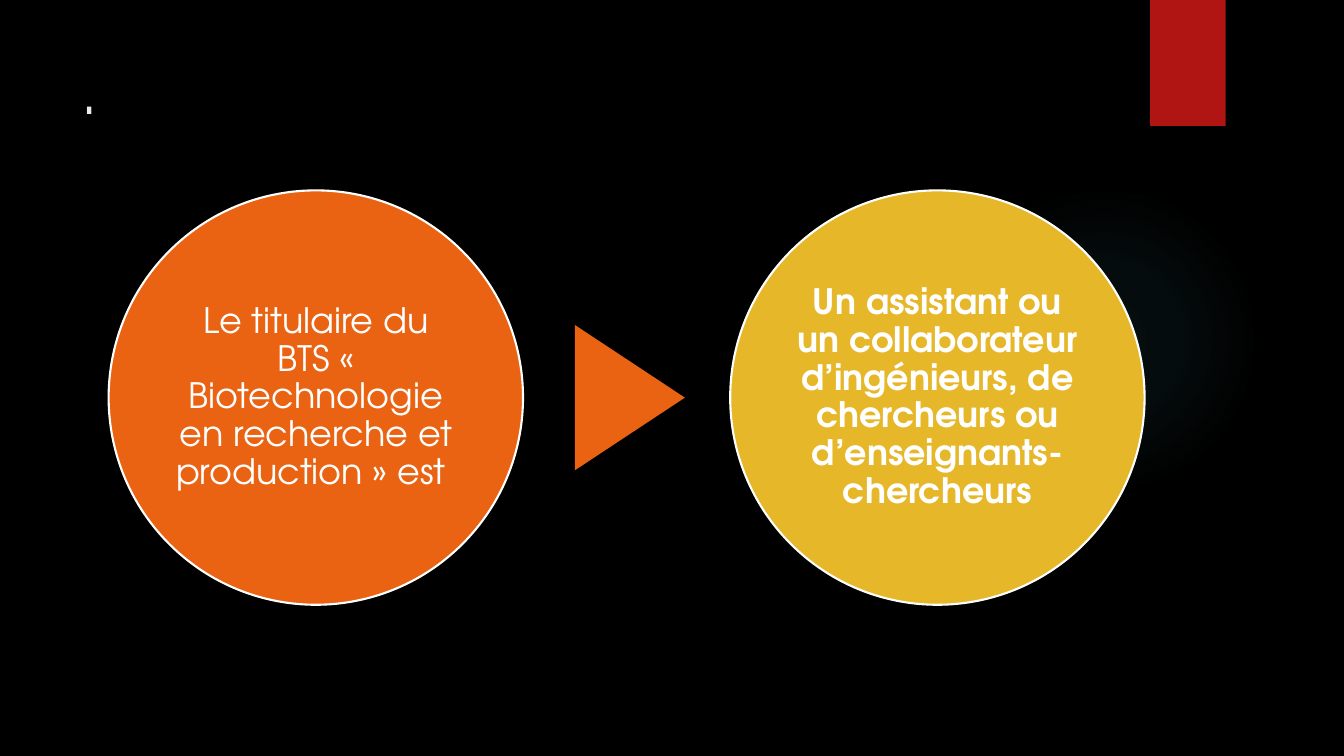
"""Build a slide on the role open to holders of the biotechnology BTS."""
import lxml.etree
import pptx
import pptx.dml.color
import pptx.enum.shapes
import pptx.enum.text
import pptx.oxml
import pptx.oxml.ns
import pptx.util

Pt = pptx.util.Pt
Shape = pptx.enum.shapes.MSO_SHAPE
Align = pptx.enum.text.PP_ALIGN
Anchor = pptx.enum.text.MSO_ANCHOR
theme = {
    "font": "TeX Gyre Adventor",
    "black": "000000",
    "white": "FFFFFF",
    "pale": "EBEBEB",
    "red": "B01513",
    "orange": "EA6312",
    "gold": "E6B729",
    "glow": "50B9C1",
    "title": 42,
    "body": 25,
}


def write(shape, text, size, color, bold=False, align=Align.LEFT,
          anchor=Anchor.TOP, inset=(7.2, 3.6), line=1.0, after=6):
    frame = shape.text_frame
    frame.word_wrap = True
    frame.auto_size = pptx.enum.text.MSO_AUTO_SIZE.NONE
    frame.vertical_anchor = anchor
    frame.margin_left = frame.margin_right = Pt(inset[0])
    frame.margin_top = frame.margin_bottom = Pt(inset[1])
    para = frame.paragraphs[0]
    para.alignment = align
    para.line_spacing = line
    para.space_before = Pt(0)
    para.space_after = Pt(after)
    run = para.add_run()
    run.text = text
    run.font.name = theme["font"]
    run.font.size = Pt(theme[size])
    run.font.bold = bold
    run.font.color.rgb = pptx.dml.color.RGBColor.from_string(theme[color])


def draw(kind, left, top, width, height, fill=None, line=None):
    shape = slide.shapes.add_shape(kind, Pt(left), Pt(top), Pt(width), Pt(height))
    shape.shadow.inherit = False
    shape.fill.background()
    shape.line.fill.background()
    if fill:
        shape.fill.solid()
        shape.fill.fore_color.rgb = pptx.dml.color.RGBColor.from_string(theme[fill])
    if line:
        shape.line.color.rgb = pptx.dml.color.RGBColor.from_string(theme[line])
        shape.line.width = Pt(1.5)
    return shape


deck = pptx.Presentation()
deck.slide_width, deck.slide_height = Pt(960), Pt(540)
slide = deck.slides.add_slide(deck.slide_layouts[5])
back = slide.background.fill
back.solid()
back.fore_color.rgb = pptx.dml.color.RGBColor.from_string(theme["black"])

glow = draw(Shape.OVAL, 677.5, 131.75, 221.75, 221.75)
stops = "".join(
    f'<a:gs pos="{spot * 1000}"><a:srgbClr val="{theme["glow"]}">'
    f'<a:alpha val="{alpha * 1000}"/></a:srgbClr></a:gs>'
    for spot, alpha in [(0, 7), (36, 6), (69, 0)])
blend = pptx.oxml.parse_xml(
    f'<a:gradFill {pptx.oxml.ns.nsdecls("a")} rotWithShape="1"><a:gsLst>{stops}</a:gsLst>'
    '<a:path path="circle"><a:fillToRect l="50000" t="50000" r="50000" b="50000"/>'
    '</a:path></a:gradFill>')
blank = glow.element.spPr.find(pptx.oxml.ns.qn("a:noFill"))
glow.element.spPr.replace(blank, blend)

draw(Shape.RECTANGLE, 821.5, 0, 54, 90, fill="red")

title = slide.shapes.title
title.left, title.top, title.width, title.height = Pt(51), Pt(36), Pt(741), Pt(110)
write(title, ".", size="title", color="pale")

roles = [
    (77.6, "orange", False,
     "Le titulaire du BTS « Biotechnologie en recherche et production » est "),
    (521.6, "gold", True,
     "Un assistant ou un collaborateur d’ingénieurs, de chercheurs ou d’enseignants-chercheurs"),
]
for left, fill, bold, text in roles:
    disc = draw(Shape.OVAL, left, 136, 296, 296, fill=fill, line="white")
    write(disc, text, size="body", color="white", bold=bold, align=Align.CENTER,
          anchor=Anchor.MIDDLE, inset=(2.5, 2.5), line=0.9, after=8.75)

arrow = draw(Shape.ISOSCELES_TRIANGLE, 398.1, 244.8, 103.7, 78.5, fill="orange")
arrow.rotation = 90

deck.save("out.pptx")
